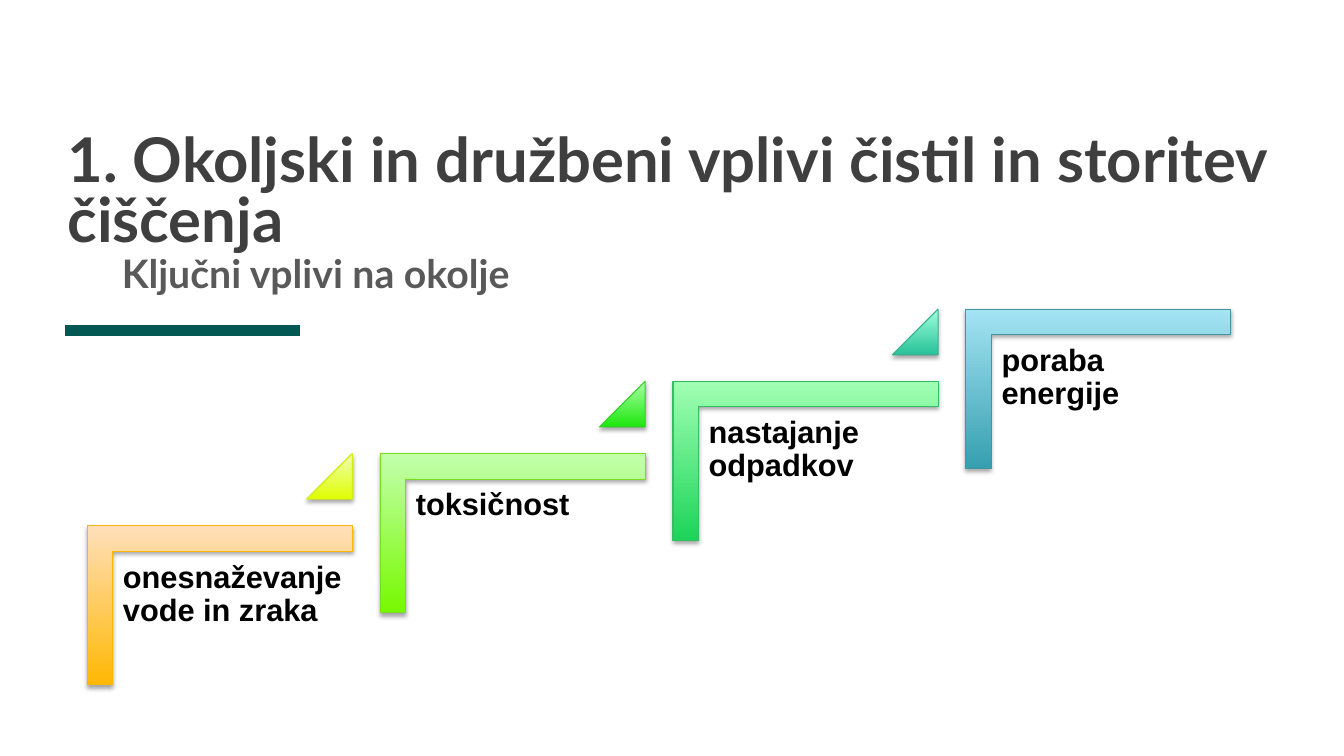
from lxml import etree
from pptx import Presentation
from pptx.dml.color import RGBColor
from pptx.enum.shapes import MSO_CONNECTOR, MSO_SHAPE
from pptx.enum.text import MSO_ANCHOR
from pptx.oxml.ns import qn
from pptx.util import Cm, Pt

LINE = MSO_CONNECTOR.STRAIGHT
CORNER = MSO_SHAPE.CORNER
TRIANGLE = MSO_SHAPE.ISOSCELES_TRIANGLE
TOP, MIDDLE, BOTTOM = MSO_ANCHOR.TOP, MSO_ANCHOR.MIDDLE, MSO_ANCHOR.BOTTOM

# label, then (dark, light, outline) of the corner and of the triangle above it
STEPS = [
    ("onesnaževanje vode in zraka",
     ("FFB804", "FFDFBA", "FAB609"), ("DFFE00", "EFFFB4", "D3ED11")),
    ("toksičnost",
     ("77F900", "C3FFAD", "78DD1C"), ("1DE70D", "A9FFA7", "33CE27")),
    ("nastajanje odpadkov",
     ("1CD459", "A1FFB3", "31BF60"), ("29C299", "9DFFDB", "3BB091")),
    ("poraba energije", ("369FB0", "A4E4F3", "4495A2"), None),
]
RUN, RISE = 7.38, 1.82
WIDE, HIGH = 6.68, 4.01
INSET = 0.67
TIP = 1.15


def color(code):
    return RGBColor.from_string(code)


def add_text(slide, box, text, font, size, ink, spacing, anchor, pads):
    """Add bold text; box and pads (left, top, right, bottom) are in cm."""
    frame = slide.shapes.add_textbox(*map(Cm, box)).text_frame
    frame.word_wrap = True
    frame.vertical_anchor = anchor
    (frame.margin_left, frame.margin_top,
     frame.margin_right, frame.margin_bottom) = map(Cm, pads)
    para = frame.paragraphs[0]
    para.text = text
    para.line_spacing = spacing
    para.font.name = font
    para.font.size = Pt(size)
    para.font.bold = True
    para.font.color.rgb = color(ink)


def add_shadow(shape):
    shape.shadow.inherit = False
    effects = shape._element.spPr.find(qn("a:effectLst"))
    outer = etree.SubElement(
        effects, qn("a:outerShdw"), blurRad=str(Pt(3.1)),
        dist=str(Pt(1.8)), dir="5400000", rotWithShape="0")
    black = etree.SubElement(outer, qn("a:srgbClr"), val="000000")
    etree.SubElement(black, qn("a:alpha"), val="35000")


def add_shape(slide, kind, box, tones, adjust):
    """Add a shape shaded from dark at the foot to light at the top."""
    dark, light, edge = tones
    shape = slide.shapes.add_shape(kind, *map(Cm, box))
    for index, value in enumerate(adjust):
        shape.adjustments[index] = value
    shape.fill.gradient()
    shape.fill.gradient_angle = 90
    for stop, tone in zip(shape.fill.gradient_stops, (dark, light)):
        stop.color.rgb = color(tone)
    shape._element.spPr.find(qn("a:gradFill")).set("rotWithShape", "0")
    shape.line.color.rgb = color(edge)
    shape.line.width = Pt(0.75)
    add_shadow(shape)
    return shape


def add_step(slide, left, top, label, tones, tip):
    # The corner is turned by 90 degrees, so its box is swapped about its middle.
    shift = (WIDE - HIGH) / 2
    corner = add_shape(slide, CORNER, (left + shift, top - shift, HIGH, WIDE),
                       tones, (0.161, 0.161))
    corner.rotation = 90
    add_text(slide, (left + INSET, top + INSET, 6.02, 5.28), label,
             "Arial", 22, "000000", 0.9, TOP, (0.23,) * 4)
    if tip:
        add_shape(slide, TRIANGLE, (left + WIDE - TIP, top - RISE, TIP, TIP),
                  tip, (1,))


def add_stairs(slide, left, top):
    for index, step in enumerate(STEPS):
        add_step(slide, left + index * RUN, top - index * RISE, *step)


def add_heading(slide, left, top):
    rule = slide.shapes.add_connector(
        LINE, Cm(left - 0.05), Cm(top + 6.73), Cm(left + 5.87), Cm(top + 6.73))
    rule.line.color.rgb = color("035854")
    rule.line.width = Pt(8)
    etree.SubElement(rule._element.spPr, qn("a:effectLst"))
    add_text(slide, (left, top, 31.7, 4.8),
             "1. Okoljski in družbeni vplivi čistil in storitev čiščenja",
             "Lato", 44, "3F3F3F", 0.8, BOTTOM, (0,) * 4)
    add_text(slide, (left + 0.48, top + 4.37, 11.48, 1.98),
             "Ključni vplivi na okolje",
             "Lato", 28, "595959", 0.9, MIDDLE, (0.89, 0.13, 0.25, 0.13))


def main():
    deck = Presentation()
    deck.slide_width, deck.slide_height = Cm(33.87), Cm(19.05)
    slide = deck.slides.add_slide(deck.slide_layouts[6])
    add_heading(slide, 1.7, 1.6)
    add_stairs(slide, 2.2, 13.25)
    deck.save("out.pptx")


if __name__ == "__main__":
    main()
